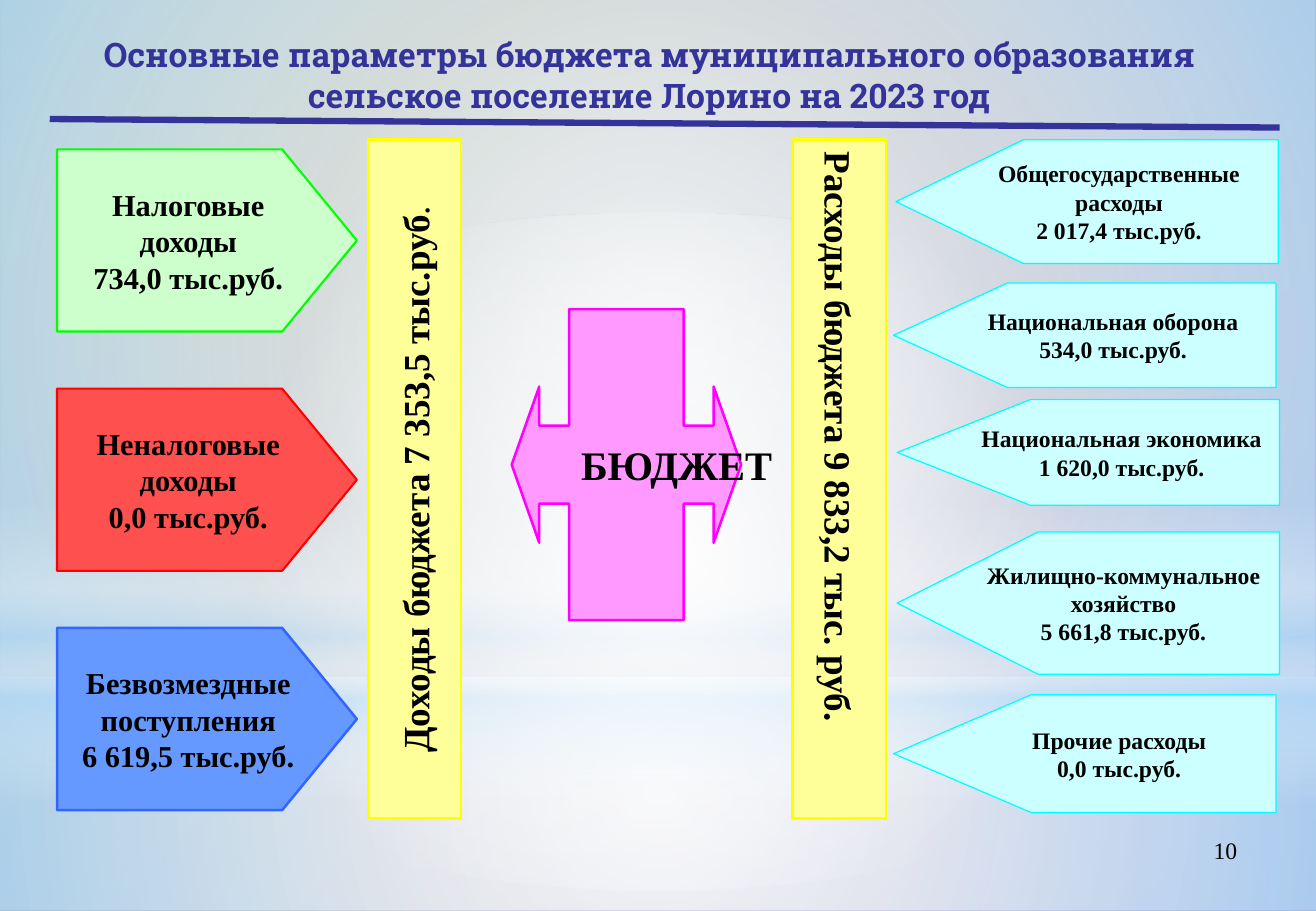
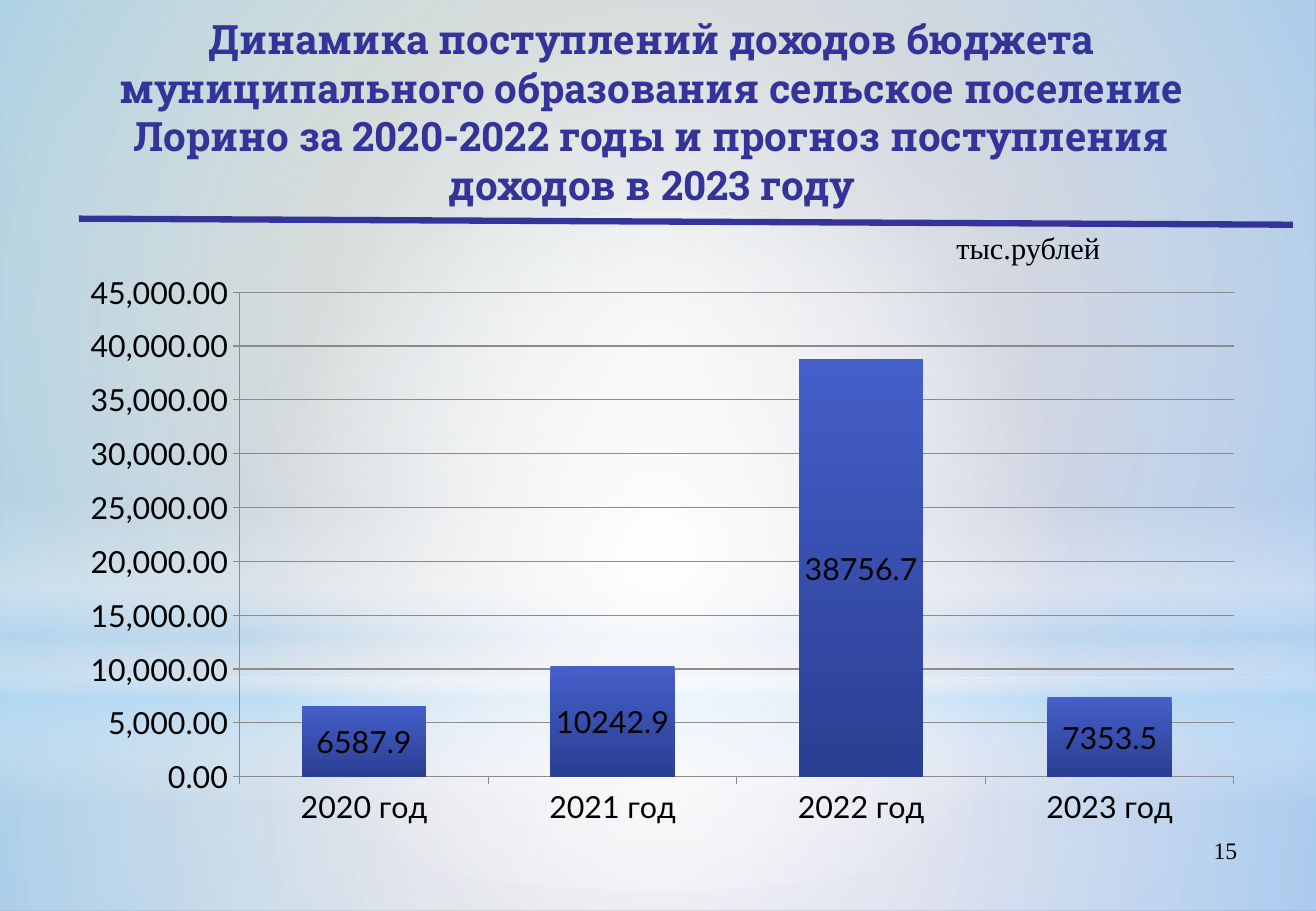
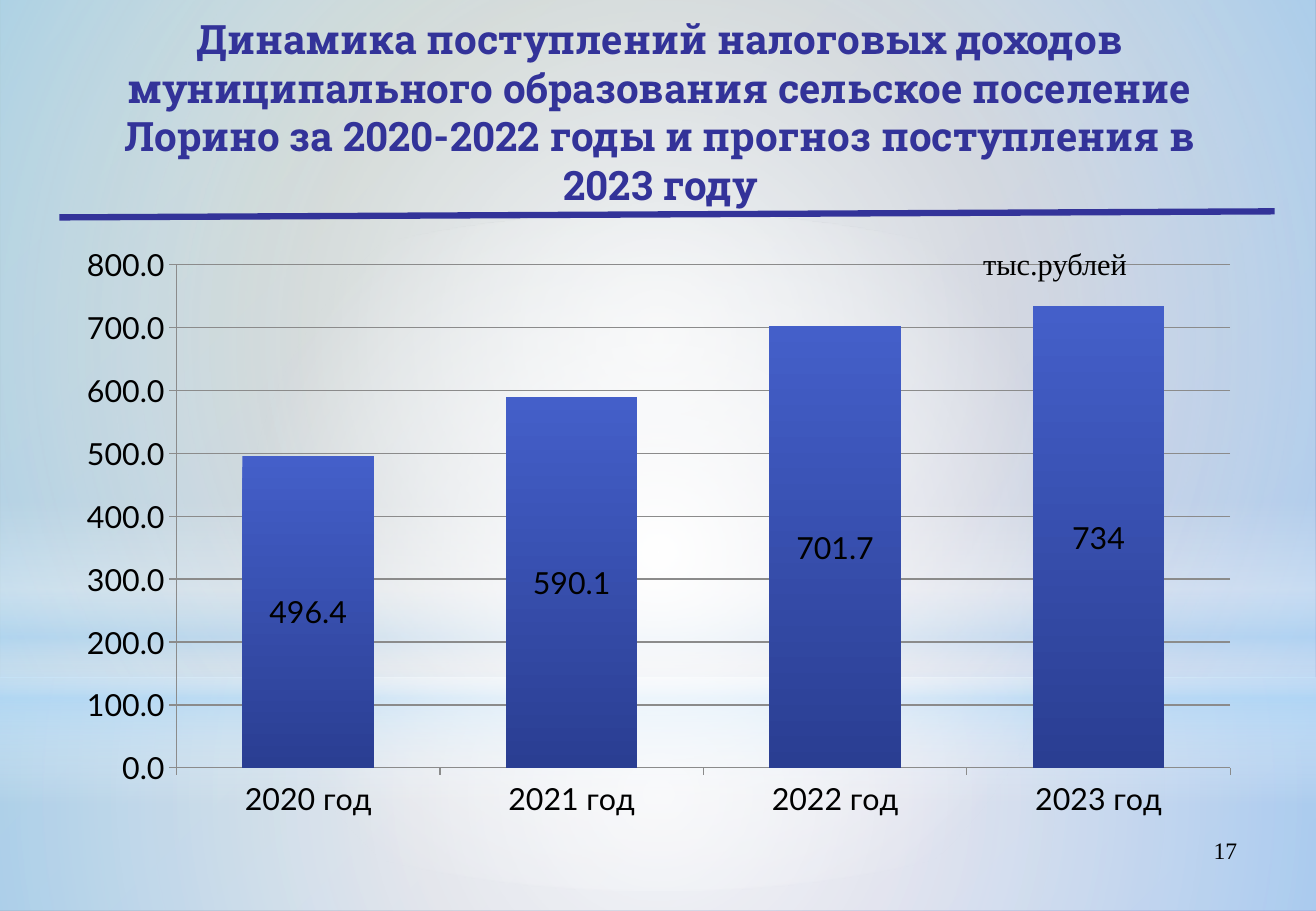
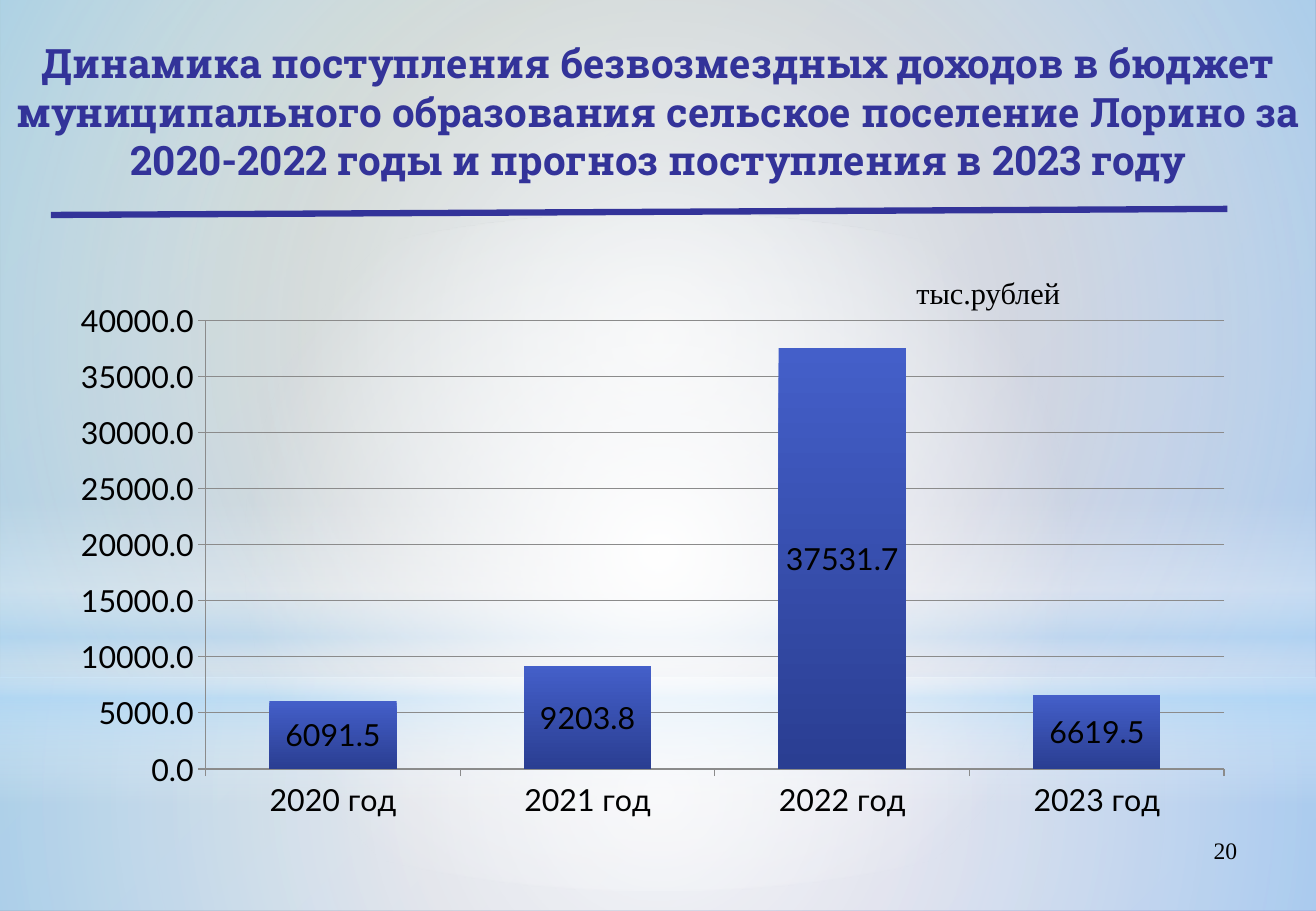
from dataclasses import dataclass
from typing import NamedTuple

from lxml.etree import SubElement
from pptx import Presentation
from pptx.chart.data import CategoryChartData
from pptx.dml.color import RGBColor
from pptx.enum.chart import XL_CHART_TYPE as ChartType, XL_TICK_MARK as TickMark
from pptx.enum.shapes import MSO_CONNECTOR as Connector, MSO_SHAPE as Shape
from pptx.enum.text import MSO_ANCHOR as Anchor, MSO_AUTO_SIZE as AutoSize, PP_ALIGN as Align
from pptx.oxml.ns import qn
from pptx.util import Emu, Pt

PX = 9144
WIDTH, HEIGHT = 1084, 750
SERIF, SLAB, SANS = "Times New Roman", "Roboto Slab", "Lato"
NAVY, BLACK, GREY = "333399", "000000", "8B8B8B"
WHITE, SKY = "FFFFFF", "B4DCFA"
BAR_TOP, BAR_BOTTOM = "445FC9", "2A3E92"
YEARS = ("2020 год", "2021 год", "2022 год", "2023 год")


class Box(NamedTuple):
    left: int
    top: int
    width: int
    height: int


class Stop(NamedTuple):
    place: int
    color: str
    opacity: int = 100


@dataclass
class Band:
    """One translucent part of the backdrop; without an angle it fades from its centre."""
    box: Box
    stops: tuple[Stop, ...]
    kind: Shape = Shape.RECTANGLE
    angle: int | None = None


@dataclass
class Income:
    lines: tuple[str, str]
    fill: str
    line: str
    weight: float


@dataclass
class Expense:
    lines: tuple[str, ...]
    box: Box
    point: float
    wrap: bool = False


@dataclass
class Trend:
    """A slide with a title, a rule and a column chart."""
    number: int
    title: str
    title_box: Box
    rule: tuple[int, int, int, int]
    chart_box: Box
    values: tuple[float, ...]
    top: int
    step: int
    axis_format: str
    unit_at: tuple[int, int]


BANDS = (
    Band(Box(0, 558, WIDTH, 192), (Stop(0, WHITE, 91), Stop(37, WHITE, 76), Stop(100, SKY, 79))),
    Band(Box(0, 0, WIDTH, 558), (Stop(0, WHITE, 89), Stop(48, WHITE, 62), Stop(100, SKY, 79))),
    Band(Box(0, 412, WIDTH, 250),
         (Stop(0, WHITE, 0), Stop(29, WHITE, 30), Stop(45, SKY, 40),
          Stop(55, WHITE, 26), Stop(65, SKY, 60), Stop(100, WHITE, 0)), angle=90),
    Band(Box(0, 175, WIDTH, 558), (Stop(0, WHITE), Stop(56, WHITE, 0)), Shape.OVAL),
)

INCOMES = (
    Income(("Налоговые доходы", "734,0 тыс.руб."), "CCFFCC", "00FF00", 1.25),
    Income(("Неналоговые доходы", "0,0 тыс.руб."), "FF5050", "FF0000", 1.25),
    Income(("Безвозмездные поступления", "6 619,5 тыс.руб."), "6699FF", "3366FF", 1.5),
)

EXPENSES = (
    Expense(("Общегосударственные", "расходы", "2 017,4 тыс.руб."), Box(738, 115, 315, 102), 1.03),
    Expense(("Национальная оборона", "534,0 тыс.руб."), Box(736, 233, 315, 86), 1.09),
    Expense(("Национальная экономика", "1 620,0 тыс.руб."), Box(739, 329, 315, 87), 1.26),
    Expense(("Жилищно-коммунальное хозяйство", "5 661,8 тыс.руб."),
            Box(739, 438, 315, 117), 0.99, wrap=True),
    Expense(("Прочие расходы", "0,0 тыс.руб."), Box(736, 572, 315, 97), 1.17),
)

TRENDS = (
    Trend(15, "Динамика поступлений доходов бюджета муниципального образования сельское поселение "
              "Лорино за 2020-2022 годы и прогноз поступления доходов в 2023 году",
          Box(49, 23, 975, 137), (65, 180, 1065, 185), Box(55, 216, 981, 473),
          (6587.9, 10242.9, 38756.7, 7353.5), 45000, 5000, "#,##0.00", (778, 184)),
    Trend(17, "Динамика поступлений налоговых доходов муниципального образования сельское поселение "
              "Лорино за 2020-2022 годы и прогноз поступления в 2023 году",
          Box(56, 23, 975, 137), (49, 179, 1050, 174), Box(52, 193, 981, 489),
          (496.4, 590.1, 701.7, 734), 800, 100, "0.0", (800, 197)),
    Trend(20, "Динамика поступления безвозмездных доходов в бюджет муниципального образования "
              "сельское поселение Лорино за 2020-2022 годы и прогноз поступления в 2023 году",
          Box(0, 23, WIDTH, 137), (42, 177, 1011, 172), Box(47, 240, 981, 442),
          (6091.5, 9203.8, 37531.7, 6619.5), 40000, 5000, "0.0", (745, 221)),
)


def emu(*lengths: int) -> list[Emu]:
    return [Emu(length * PX) for length in lengths]


def rgb(color: str) -> RGBColor:
    return RGBColor.from_string(color)


def style_font(font, *, size: float, name: str = SERIF, color: str = BLACK, bold: bool = False):
    font.size, font.name, font.bold = Pt(size), name, bold
    font.color.rgb = rgb(color)


def write(shape, *lines: str, align=Align.CENTER, anchor=Anchor.MIDDLE, wrap: bool = True,
          vert: str | None = None, turn: int = 0, **font):
    """Fill a shape with one paragraph a line; turn rotates the text inside the shape."""
    frame = shape.text_frame
    frame.auto_size = AutoSize.NONE
    frame.word_wrap, frame.vertical_anchor = wrap, anchor
    body = shape.element.txBody.bodyPr
    if vert:
        body.set("vert", vert)
    if turn:
        body.set("rot", str(turn * 60000))
    for order, line in enumerate(lines):
        para = frame.add_paragraph() if order else frame.paragraphs[0]
        para.alignment = align
        span = para.add_run()
        span.text = line
        style_font(span.font, **font)


def paint_gradient(owner, stops: tuple[Stop, ...], angle: int | None):
    """Rewrite the gradient found inside an element."""
    gradient = owner.find(".//" + qn("a:gradFill"))
    for child in list(gradient):
        gradient.remove(child)
    stop_list = SubElement(gradient, qn("a:gsLst"))
    for stop in stops:
        mark = SubElement(stop_list, qn("a:gs"), pos=str(stop.place * 1000))
        color = SubElement(mark, qn("a:srgbClr"), val=stop.color)
        if stop.opacity < 100:
            SubElement(color, qn("a:alpha"), val=str(stop.opacity * 1000))
    if angle is None:
        fade = SubElement(gradient, qn("a:path"), path="circle")
        SubElement(fade, qn("a:fillToRect"), {side: "50000" for side in "ltrb"})
    else:
        SubElement(gradient, qn("a:lin"), ang=str(angle * 60000), scaled="0")


def add_figure(page, kind, box: Box, fill: str, line: str, weight: float,
               rotation: int = 0, adjustments: tuple[float, ...] = ()):
    figure = page.shapes.add_shape(kind, *emu(*box))
    figure.shadow.inherit = False
    figure.fill.solid()
    figure.fill.fore_color.rgb = rgb(fill)
    figure.line.color.rgb = rgb(line)
    figure.line.width = Pt(weight)
    figure.rotation = rotation
    for order, value in enumerate(adjustments):
        figure.adjustments[order] = value
    return figure


def add_backdrop(deck, page):
    """Draw the bands on a page, then move them to the master so that all pages share them."""
    master = deck.slide_master
    master.background.fill.gradient()
    paint_gradient(master.element.cSld, (Stop(0, "96AB94"), Stop(100, "8488C4")), 45)
    for order, band in enumerate(BANDS):
        shape = page.shapes.add_shape(band.kind, *emu(*band.box))
        shape.shadow.inherit = False
        shape.line.fill.background()
        shape.fill.gradient()
        paint_gradient(shape.element.spPr, band.stops, band.angle)
        shape.element.nvSpPr.cNvPr.set("id", str(20 + order))
        master.element.cSld.spTree.insert(2 + order, shape.element)


def add_page(deck, number: int, title: str, box: Box, size: int, rule: tuple[int, int, int, int]):
    page = deck.slides.add_slide(deck.slide_layouts[5])
    heading = page.shapes.title
    heading.left, heading.top, heading.width, heading.height = emu(*box)
    write(heading, title, size=size, name=SLAB, color=NAVY, bold=True)
    line = page.shapes.add_connector(Connector.STRAIGHT, *emu(*rule))
    line.line.color.rgb = rgb(NAVY)
    line.line.width = Pt(3.75)
    SubElement(line.element.spPr, qn("a:effectLst"))
    label = page.shapes.add_textbox(*emu(776, 683, 253, 52))
    write(label, str(number), align=Align.RIGHT, anchor=Anchor.TOP, size=14)
    return page


def add_budget(deck):
    page = add_page(deck, 10, "Основные параметры бюджета муниципального образования "
                              "сельское поселение Лорино на 2023 год",
                    Box(31, 23, 1008, 77), 20, (41, 98, 1054, 105))
    budget = add_figure(page, Shape.UP_DOWN_ARROW_CALLOUT, Box(388, 288, 256, 189),
                        "FF99FF", "FF00FF", 1.5, 270, (0.34, 0.34, 0.12, 0.5))
    write(budget, "БЮДЖЕТ", wrap=False, vert="eaVert", size=24, bold=True)

    income_total, expense_total = (
        add_figure(page, Shape.RECTANGLE, Box(left, 115, 77, 559), "FFFF99", "FFFF00", 1.5)
        for left in (303, 653))
    write(income_total, "Доходы бюджета 7 353,5 тыс.руб", wrap=False, vert="vert270",
          size=22, bold=True)
    stop = income_total.text_frame.paragraphs[0].add_run()
    stop.text = "."
    style_font(stop.font, size=22)
    write(expense_total, "Расходы бюджета 9 833,2 тыс. руб.", wrap=False, vert="eaVert",
          size=22, bold=True)

    for order, income in enumerate(INCOMES):
        plate = add_figure(page, Shape.PENTAGON, Box(47, 123 + 197 * order, 247, 150),
                           income.fill, income.line, income.weight, adjustments=(0.41,))
        write(plate, *income.lines, size=18, bold=True)
    for expense in EXPENSES:
        plate = add_figure(page, Shape.PENTAGON, expense.box, "CCFFFF", "00FFFF", 0.75,
                           180, (expense.point,))
        write(plate, *expense.lines, wrap=expense.wrap, turn=180, size=14, bold=True)
    return page


def add_columns(page, trend: Trend):
    data = CategoryChartData()
    data.categories = YEARS
    data.add_series("Series 1", trend.values)
    chart = page.shapes.add_chart(ChartType.COLUMN_STACKED, *emu(*trend.chart_box), data).chart
    chart.has_legend = chart.has_title = False
    style_font(chart.font, size=18, name=SANS)
    plot = chart.plots[0]
    plot.gap_width, plot.overlap, plot.vary_by_categories = 100, 100, False
    fill = plot.series[0].format.fill
    fill.gradient()
    paint_gradient(plot.series[0].format.element if hasattr(plot.series[0].format, "element")
                   else chart.element, (Stop(0, BAR_TOP), Stop(100, BAR_BOTTOM)), 90)
    plot.has_data_labels = True
    labels = plot.data_labels
    labels.show_value = True
    labels.number_format, labels.number_format_is_linked = "General", False
    style_font(labels.font, size=18, name=SANS)

    for axis in (chart.category_axis, chart.value_axis):
        axis.major_tick_mark, axis.minor_tick_mark = TickMark.OUTSIDE, TickMark.NONE
        axis.format.line.color.rgb = rgb(GREY)
        axis.format.line.width = Pt(0.75)
    scale = chart.value_axis
    scale.minimum_scale, scale.maximum_scale, scale.major_unit = 0, trend.top, trend.step
    scale.tick_labels.number_format = trend.axis_format
    scale.tick_labels.number_format_is_linked = False
    scale.major_gridlines.format.line.color.rgb = rgb(GREY)
    scale.major_gridlines.format.line.width = Pt(0.75)


def add_trend(deck, trend: Trend):
    page = add_page(deck, trend.number, trend.title, trend.title_box, 24, trend.rule)
    add_columns(page, trend)
    unit = page.shapes.add_textbox(*emu(*trend.unit_at, 140, 40))
    write(unit, "тыс.рублей", align=Align.LEFT, anchor=Anchor.TOP, wrap=False, size=18)


def main():
    deck = Presentation()
    deck.slide_width, deck.slide_height = emu(WIDTH, HEIGHT)
    add_backdrop(deck, add_budget(deck))
    for trend in TRENDS:
        add_trend(deck, trend)
    deck.save("out.pptx")


if __name__ == "__main__":
    main()
